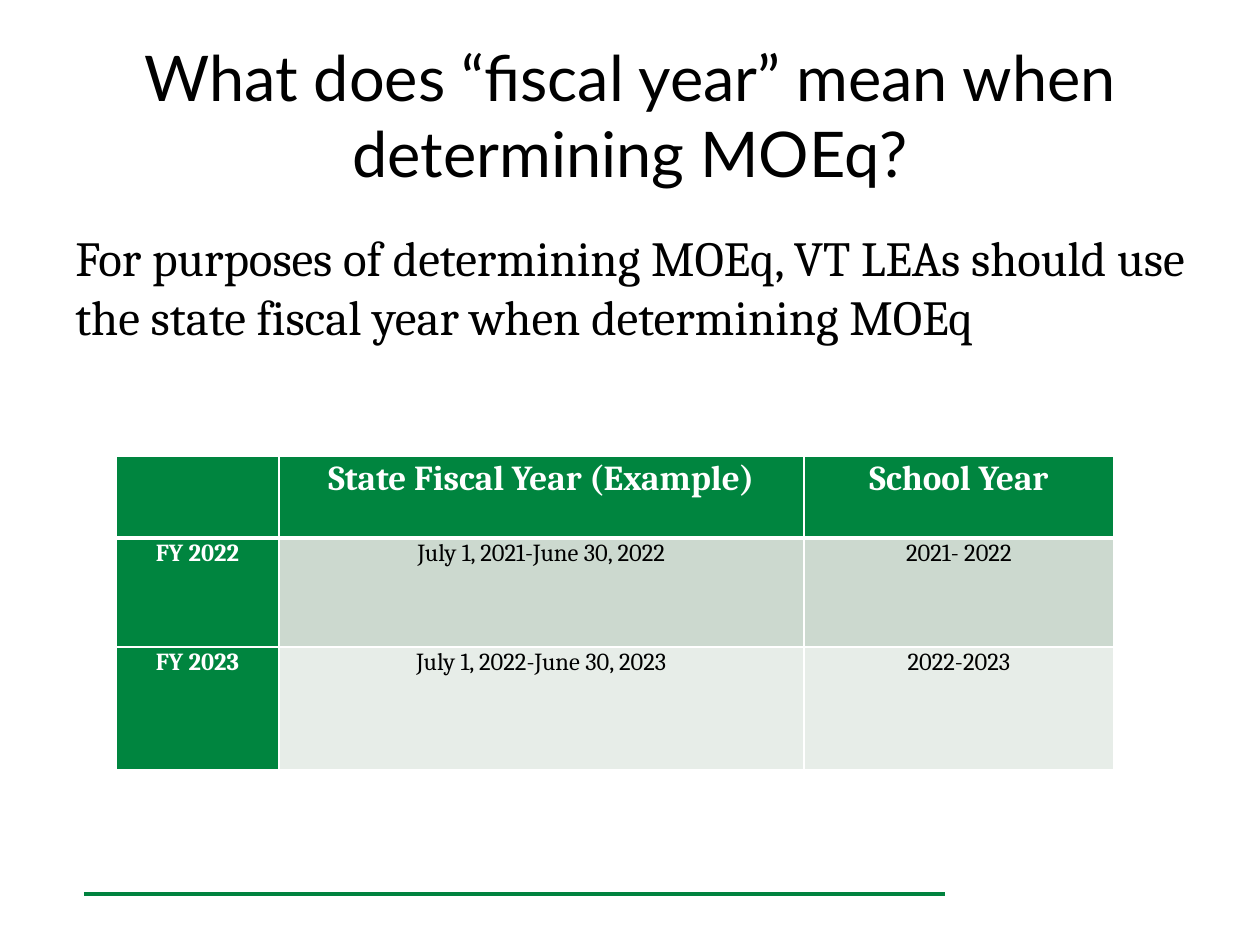
import pptx
import pptx.dml.color
import pptx.enum.shapes
import pptx.enum.text
import pptx.oxml.ns
import pptx.util
from lxml import etree

RGBColor = pptx.dml.color.RGBColor
BLACK = RGBColor(0x00, 0x00, 0x00)
WHITE = RGBColor(0xFF, 0xFF, 0xFF)
RULE_GREEN = RGBColor(0x00, 0x82, 0x3E)
TABLE_GREEN = RGBColor(0x00, 0x85, 0x3F)
BAND_FILLS = [RGBColor(0xCC, 0xD9, 0xCF), RGBColor(0xE7, 0xED, 0xE8)]

PX_PER_INCH = 126
CENTER = pptx.enum.text.PP_ALIGN.CENTER
qn = pptx.oxml.ns.qn


def px(length):
    return pptx.util.Emu(round(length * 914400 / PX_PER_INCH))


def style_text(frame, size, font_name, color, bold=False, align=None):
    para = frame.paragraphs[0]
    para.alignment = align
    for span in para.runs:
        span.font.size = pptx.util.Pt(size)
        span.font.name = font_name
        span.font.bold = bold
        span.font.color.rgb = color


deck = pptx.Presentation()
deck.slide_width = px(1260)
deck.slide_height = px(945)
page = deck.slides.add_slide(deck.slide_layouts[6])

# Footer rule
rule = page.shapes.add_connector(
    pptx.enum.shapes.MSO_CONNECTOR.STRAIGHT, px(84), px(894), px(945), px(894))
rule.line.color.rgb = RULE_GREEN
rule.line.width = pptx.util.Pt(2.25)
etree.SubElement(rule._element.spPr, qn("a:effectLst"))

# Title, growing upwards from the bottom of its box
title = page.shapes.add_textbox(px(63), px(105), px(1134), px(91))
title.text_frame.word_wrap = True
title.text_frame.vertical_anchor = pptx.enum.text.MSO_ANCHOR.BOTTOM
title.text_frame.text = "What does “fiscal year” mean when determining MOEq?"
style_text(title.text_frame, 36, "Lato", BLACK, align=CENTER)

# Body
body = page.shapes.add_textbox(px(63), px(221), px(1134), px(210))
body.text_frame.word_wrap = True
body.text_frame.text = ("For purposes of determining MOEq, VT LEAs should use "
                        "the state fiscal year when determining MOEq")
style_text(body.text_frame, 28, "Cambria", BLACK)

# Fiscal year table
rows = [
    ["", "State Fiscal Year (Example)", "School Year"],
    ["FY 2022", "July 1, 2021-June 30, 2022", "2021- 2022"],
    ["FY 2023", "July 1, 2022-June 30, 2023", "2022-2023"],
]
column_widths = [163, 525, 310]
row_heights = [82, 109, 123]
table = page.shapes.add_table(
    len(rows), len(column_widths), px(116), px(456),
    px(sum(column_widths)), px(sum(row_heights))).table
table.first_row = False
table.horz_banding = False
for column, width in zip(table.columns, column_widths):
    column.width = px(width)
for row, height in zip(table.rows, row_heights):
    row.height = px(height)

for row_index, texts in enumerate(rows):
    for column_index, text in enumerate(texts):
        cell = table.cell(row_index, column_index)
        is_header = row_index == 0
        is_heading = is_header or column_index == 0

        cell.margin_left = cell.margin_right = px(9)
        cell.margin_top = cell.margin_bottom = 0
        cell_properties = cell._tc.get_or_add_tcPr()
        for side in ("L", "R", "T", "B"):
            # The edge shared by the header and the first data row is thick
            thick = (row_index, side) in ((0, "B"), (1, "T"))
            border = etree.SubElement(
                cell_properties, qn("a:ln" + side),
                w=str(pptx.util.Pt(3 if thick else 1)))
            border_fill = etree.SubElement(border, qn("a:solidFill"))
            etree.SubElement(border_fill, qn("a:srgbClr"), val=str(WHITE))
        cell.fill.solid()
        cell.fill.fore_color.rgb = (
            TABLE_GREEN if is_heading else BAND_FILLS[row_index - 1])

        if text:
            cell.text_frame.text = text
            cell.text_frame.paragraphs[0].line_spacing = 1.07
            style_text(cell.text_frame, 20 if is_header else 14, "Cambria",
                       WHITE if is_heading else BLACK, is_heading, CENTER)

deck.save("out.pptx")
